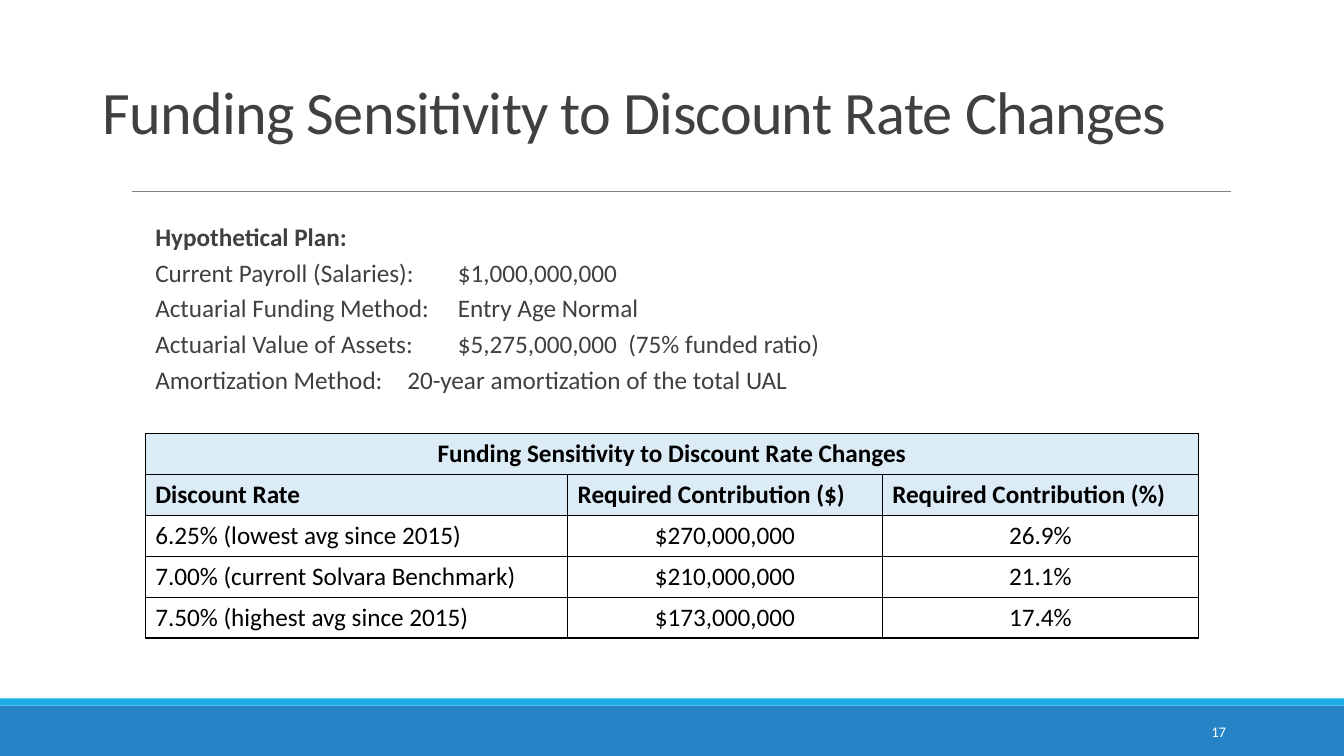
from lxml.etree import SubElement
from pptx import Presentation
from pptx.dml.color import RGBColor
from pptx.enum.shapes import MSO_CONNECTOR, MSO_SHAPE
from pptx.enum.text import MSO_ANCHOR as ANCHOR, MSO_AUTO_SIZE, PP_ALIGN as ALIGN
from pptx.oxml import parse_xml
from pptx.oxml.ns import nsdecls, qn
from pptx.util import Inches, Pt

GREY, BLACK, WHITE, HEADER = "404040", "000000", "FFFFFF", "DCECF7"
LEFT, WIDTH = 1.44, 10.45  # shared column of the list and the table


def rgb(value):
    return RGBColor.from_string(value)


def write(p, text, size, color, **formats):
    """Put text into a paragraph as one run; formats are paragraph attributes, plus bold."""
    r = p.add_run()
    r.text = text
    r.font.name, r.font.size, r.font.color.rgb = "Calibri", Pt(size), rgb(color)
    r.font.bold = formats.pop("bold", False)
    for name, value in formats.items():
        setattr(p, name, value)
    return r


prs = Presentation()
prs.slide_width, prs.slide_height = Inches(13.33), Inches(7.5)
s = prs.slides.add_slide(prs.slide_layouts[1])
title, body = s.placeholders

# Footer bands and title rule
for top, height, color in [(7, 0.5, "2683C6"), (6.93, 0.07, "1CADE4")]:
    band = s.shapes.add_shape(MSO_SHAPE.RECTANGLE, 0, Inches(top), prs.slide_width, Inches(height))
    band.shadow.inherit = False
    band.fill.solid()
    band.fill.fore_color.rgb = rgb(color)
    band.line.fill.background()

rule = s.shapes.add_connector(
    MSO_CONNECTOR.STRAIGHT, Inches(1.31), Inches(1.9), Inches(12.21), Inches(1.9))
rule.line.color.rgb, rule.line.width = rgb("808080"), Pt(0.5)
SubElement(rule._element.spPr, qn("a:effectLst"))

# Text frames
number = s.shapes.add_textbox(0, 0, 0, 0)
for sp, box, anchor in [
    (title, (0.92, 0.42, 11.5, 1.09), ANCHOR.BOTTOM),
    (body, (LEFT, 2.18, WIDTH, 1.88), ANCHOR.TOP),
    (number, (10.83, 7.06, 1.43, 0.4), ANCHOR.MIDDLE),
]:
    sp.left, sp.top, sp.width, sp.height = map(Inches, box)
    tf = sp.text_frame
    tf.word_wrap, tf.auto_size, tf.vertical_anchor = True, MSO_AUTO_SIZE.NONE, anchor

r = write(title.text_frame.paragraphs[0], "Funding Sensitivity to Discount Rate Changes",
          43, GREY, alignment=ALIGN.LEFT, line_spacing=0.85)
r.font._element.set("spc", "-50")
write(number.text_frame.paragraphs[0], "17", 10.5, WHITE, alignment=ALIGN.RIGHT)

# Plan assumptions
plan = [
    "Hypothetical Plan:",
    "Current Payroll (Salaries):\t$1,000,000,000",
    "Actuarial Funding Method:\tEntry Age Normal",
    "Actuarial Value of Assets:\t$5,275,000,000  (75% funded ratio)",
    "Amortization Method:\t20-year amortization of the total UAL",
]
tf = body.text_frame
for i, text in enumerate(plan):
    p = tf.add_paragraph() if i else tf.paragraphs[0]
    write(p, text, 18, GREY, bold=i == 0, line_spacing=0.9, space_before=Pt(6))
    pPr = p._p.get_or_add_pPr()
    pPr.set("marL", "0")
    pPr.set("indent", "0")
    SubElement(pPr, qn("a:buNone"))
    tabs = SubElement(pPr, qn("a:tabLst"))
    SubElement(tabs, qn("a:tab"), pos=str(Inches(3)), algn="l")

# Sensitivity table
rows = [
    ("Funding Sensitivity to Discount Rate Changes", "", ""),
    ("Discount Rate", "Required Contribution ($)", "Required Contribution (%)"),
    ("6.25% (lowest avg since 2015)", "$270,000,000", "26.9%"),
    ("7.00% (current Solvara Benchmark)", "$210,000,000", "21.1%"),
    ("7.50% (highest avg since 2015)", "$173,000,000", "17.4%"),
]
table = s.shapes.add_table(
    len(rows), 3, Inches(LEFT), Inches(4.3), Inches(WIDTH), Inches(2.03)).table
table.first_row = table.horz_banding = False
for column, width in zip(table.columns, (4.19, 3.12, 3.14)):
    column.width = Inches(width)
table.cell(0, 0).merge(table.cell(0, 2))

for y, row in enumerate(rows):
    for x, text in enumerate(row):
        cell = table.cell(y, x)
        header = y < 2
        if header:
            cell.fill.solid()
            cell.fill.fore_color.rgb = rgb(HEADER)
        else:
            cell.fill.background()
        if text:
            centred = y == 0 or (y > 1 and x > 0)
            write(cell.text_frame.paragraphs[0], text, 18, BLACK, bold=header,
                  alignment=ALIGN.CENTER if centred else ALIGN.LEFT)
        tcPr = cell._tc.get_or_add_tcPr()
        for i, side in enumerate("LRTB"):
            tcPr.insert(i, parse_xml(
                f'<a:ln{side} {nsdecls("a")} w="{Pt(1)}"><a:solidFill>'
                f'<a:srgbClr val="{BLACK}"/></a:solidFill></a:ln{side}>'))

prs.save("out.pptx")
